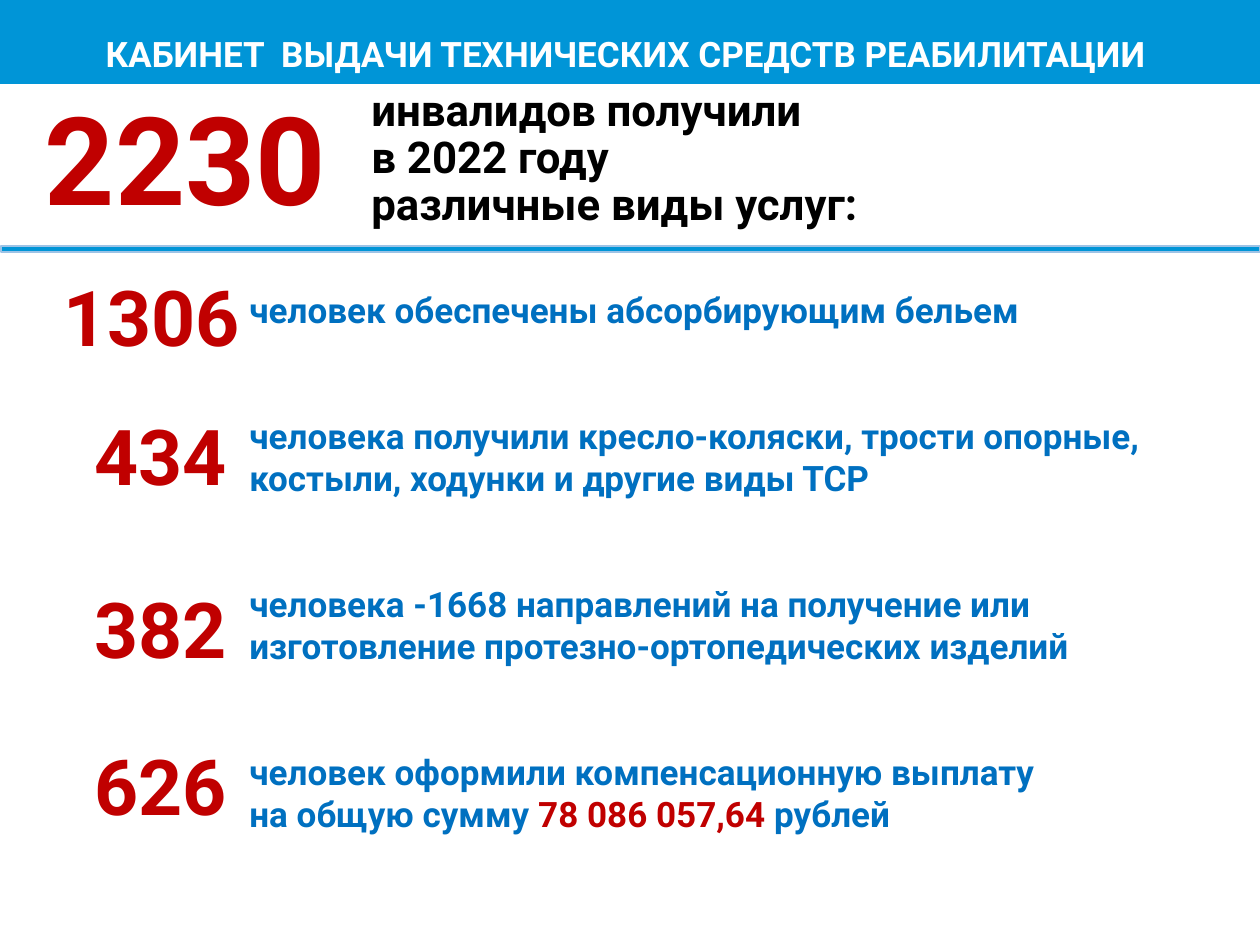
from pptx import Presentation
from pptx.dml.color import RGBColor
from pptx.enum.shapes import MSO_SHAPE
from pptx.enum.text import MSO_ANCHOR, MSO_AUTO_SIZE, PP_ALIGN
from pptx.util import Pt

RECT = MSO_SHAPE.RECTANGLE
TOP, MIDDLE = MSO_ANCHOR.TOP, MSO_ANCHOR.MIDDLE
LEFT, CENTER = PP_ALIGN.LEFT, PP_ALIGN.CENTER
NO_FIT = MSO_AUTO_SIZE.NONE
EMU_PER_PX = 914400 / 126
FONT = "Roboto"
COLORS = {"bar": "0095D7", "edge": "9DC3E6", "number": "C00000",
          "text": "0070C0", "black": "000000", "white": "FFFFFF"}

TITLE = "КАБИНЕТ  ВЫДАЧИ ТЕХНИЧЕСКИХ СРЕДСТВ РЕАБИЛИТАЦИИ "
TOTAL = "2230"
TOTAL_LINES = ["инвалидов получили", "в 2022 году", "различные виды услуг:"]
COUNTS = [("1306", 38, 0), ("434", 47, 139), ("382", 47, 312), ("626", 47, 469)]
SERVICES = [
    [[("человек обеспечены абсорбирующим бельем", "text")]],
    [[("человека получили кресло-коляски, трости опорные, "
       "костыли, ходунки и другие виды ТСР", "text")]],
    [[("человека -1668 направлений на получение или "
       "изготовление протезно-ортопедических изделий", "text")]],
    [[("человек оформили компенсационную выплату", "text")],
     [("на общую сумму ", "text"), ("78 086 057,64 ", "number"), ("рублей", "text")]],
]


def px(n):
    """Turn pixels into EMU."""
    return round(n * EMU_PER_PX)


def rgb(name):
    """Look up a palette colour."""
    return RGBColor.from_string(COLORS[name])


def add_rect(s, x, y, w, h, edge=None):
    """Add a blue bar, outlined when an edge colour is named."""
    sp = s.shapes.add_shape(RECT, px(x), px(y), px(w), px(h))
    sp.shadow.inherit = False
    sp.fill.solid()
    sp.fill.fore_color.rgb = rgb("bar")
    if edge:
        sp.line.color.rgb = rgb(edge)
        sp.line.width = Pt(1)
    else:
        sp.line.fill.background()
    return sp


def write(tf, paragraphs, size, align=LEFT, anchor=MIDDLE, spacing=0.9):
    """Fill a text frame with paragraphs of (text, colour) runs."""
    tf.word_wrap = True
    tf.auto_size = NO_FIT
    tf.vertical_anchor = anchor
    for i, runs in enumerate(paragraphs):
        p = tf.add_paragraph() if i else tf.paragraphs[0]
        p.alignment = align
        p.line_spacing = spacing
        for text, color in runs:
            r = p.add_run()
            r.text = text
            r.font.name = FONT
            r.font.size = Pt(size)
            r.font.bold = True
            r.font.color.rgb = rgb(color)


def add_text(s, x, y, w, h, paragraphs, size, **style):
    """Add a text box and return its frame."""
    tf = s.shapes.add_textbox(px(x), px(y), px(w), px(h)).text_frame
    write(tf, paragraphs, size, **style)
    return tf


def add_header(s, x, y, w):
    """Place the top bar and the title over it."""
    bar = add_rect(s, x, y - 1, w, 85)
    title = s.shapes.title
    title._element.addprevious(bar._element)
    title.left, title.top, title.width, title.height = px(x), px(y + 31), px(w), px(73)
    write(title.text_frame, [[(TITLE, "white")]], 20, align=CENTER, anchor=TOP)


def add_total(s, x, y, w):
    """Place the total, its caption and the rule below them."""
    add_rect(s, x + 1, y + 162, w - 1, 6, edge="edge")
    add_text(s, x - 40, y + 43, 451, 78, [[(TOTAL, "number")]], 70, align=CENTER)
    add_text(s, x + 359, y + 16, 714, 118,
             [[(line, "black")] for line in TOTAL_LINES], 25)


def add_services(s, x, y, w, h):
    """Place the list of services and the count beside each."""
    tf = add_text(s, x + 237, y - 1, w - 237, h,
                  [runs for service in SERVICES for runs in service],
                  20, anchor=TOP, spacing=1.0)
    first = 0
    for service in SERVICES:
        if first:
            tf.paragraphs[first].space_before = Pt(48)
        first += len(service)
    for count, dx, dy in COUNTS:
        add_text(s, x + dx, y + dy, 227, 78, [[(count, "number")]], 44, align=CENTER)


def main():
    """Build the slide and save it."""
    prs = Presentation()
    prs.slide_width, prs.slide_height = px(1260), px(945)
    s = prs.slides.add_slide(prs.slide_layouts[5])
    add_header(s, 0, 0, 1260)
    add_total(s, 0, 84, 1260)
    add_services(s, 0, 283, 1260, 564)
    prs.save("out.pptx")


if __name__ == "__main__":
    main()
